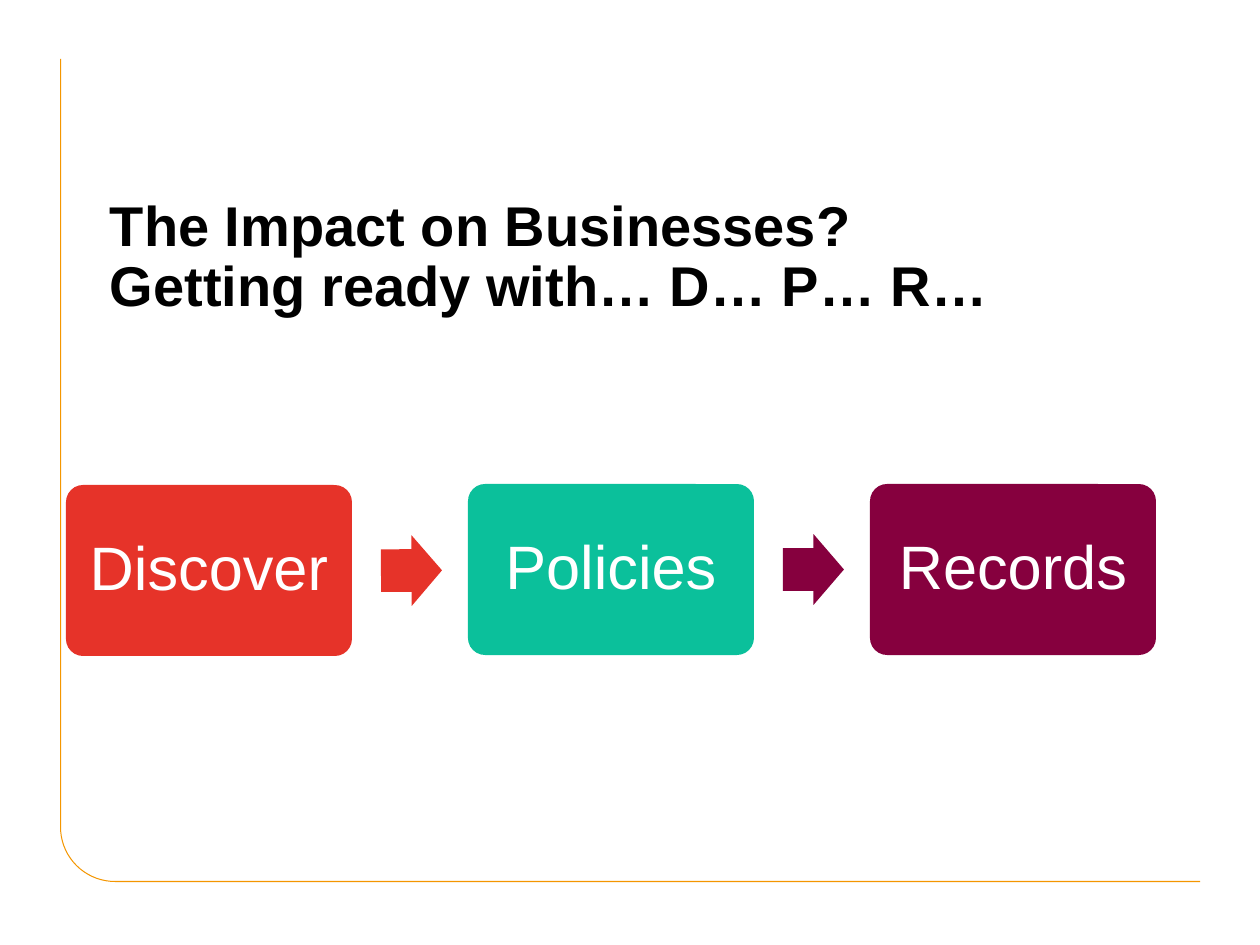
import math
from dataclasses import dataclass

import pptx
import pptx.dml.color
import pptx.enum.shapes
import pptx.enum.text
import pptx.util

PX = 914400 / 126
SHAPE = pptx.enum.shapes.MSO_SHAPE
ALIGN = pptx.enum.text.PP_ALIGN
ANCHOR = pptx.enum.text.MSO_ANCHOR


@dataclass(frozen=True)
class Theme:
    font: str = "Arial"
    frame: str = "F49600"
    ink: str = "000000"
    light: str = "FFFFFF"
    red: str = "E63329"
    green: str = "0BC09B"
    plum: str = "86003E"
    title_size: int = 32
    card_size: int = 35


THEME = Theme()


def px(n):
    return pptx.util.Emu(round(n * PX))


def rgb(value):
    return pptx.dml.color.RGBColor.from_string(value)


def paint(s, color):
    s.shadow.inherit = False
    s.fill.solid()
    s.fill.fore_color.rgb = rgb(color)
    s.line.fill.background()


def write(s, text, *, size, color, bold=False, align=ALIGN.LEFT,
          anchor=ANCHOR.TOP, spacing=0.9, inset=0):
    tf = s.text_frame
    tf.word_wrap = True
    tf.vertical_anchor = anchor
    tf.margin_left = tf.margin_right = px(inset)
    tf.margin_top = tf.margin_bottom = px(inset)
    p = tf.paragraphs[0]
    p.alignment = align
    p.line_spacing = spacing
    for i, line in enumerate(text.split("\n")):
        if i:
            p.add_line_break()
        r = p.add_run()
        r.text = line
        r.font.name = THEME.font
        r.font.size = pptx.util.Pt(size)
        r.font.bold = bold
        r.font.color.rgb = rgb(color)


def add_shape(shapes, kind, box, color, adjustments):
    s = shapes.add_shape(kind, *map(px, box))
    for i, value in enumerate(adjustments):
        s.adjustments[i] = value
    paint(s, color)
    return s


def add_frame(shapes, left, top, right, bottom, radius, stroke):
    cx, cy = left + radius, bottom - radius

    def edge(r):
        angles = [math.radians(a) for a in range(90, 181, 5)]
        corner = [(cx + r * math.cos(a), cy + r * math.sin(a)) for a in angles]
        return [(right, cy + r), *corner, (cx - r, top)]

    outline = edge(radius) + edge(radius - stroke)[::-1]
    points = [(px(x), px(y)) for x, y in outline]
    builder = shapes.build_freeform(*points[0])
    builder.add_line_segments(points[1:], close=True)
    paint(builder.convert_to_shape(), THEME.frame)


def add_title(shapes, text):
    s = shapes.add_textbox(px(110), px(198), px(1090), px(130))
    write(s, text, size=THEME.title_size, color=THEME.ink, bold=True)


def add_card(shapes, text, left, top, color):
    s = add_shape(shapes, SHAPE.ROUNDED_RECTANGLE, (left, top, 286, 171), color, [0.1])
    write(s, text, size=THEME.card_size, color=THEME.light,
          align=ALIGN.CENTER, anchor=ANCHOR.MIDDLE, inset=8)


def add_arrow(shapes, left, top, color, rotation):
    s = add_shape(shapes, SHAPE.RIGHT_ARROW, (left, top, 61, 71), color, [0.6, 0.5])
    s.rotation = rotation


def main():
    prs = pptx.Presentation()
    prs.slide_width, prs.slide_height = px(1260), px(945)
    shapes = prs.slides.add_slide(prs.slide_layouts[6]).shapes

    add_frame(shapes, 60, 59, 1200, 882, radius=55, stroke=1)
    add_title(shapes, "The Impact on Businesses?\nGetting ready with… D… P… R…")

    first, pitch = 66, 402
    cards = [("Discover", 485, THEME.red),
             ("Policies", 484, THEME.green),
             ("Records", 484, THEME.plum)]
    for i, (text, top, color) in enumerate(cards):
        add_card(shapes, text, first + i * pitch, top, color)

    arrows = [(535, THEME.red, 359.7), (534, THEME.plum, 0)]
    for i, (top, color, rotation) in enumerate(arrows):
        add_arrow(shapes, first + i * pitch + 315, top, color, rotation)

    prs.save("out.pptx")


if __name__ == "__main__":
    main()
